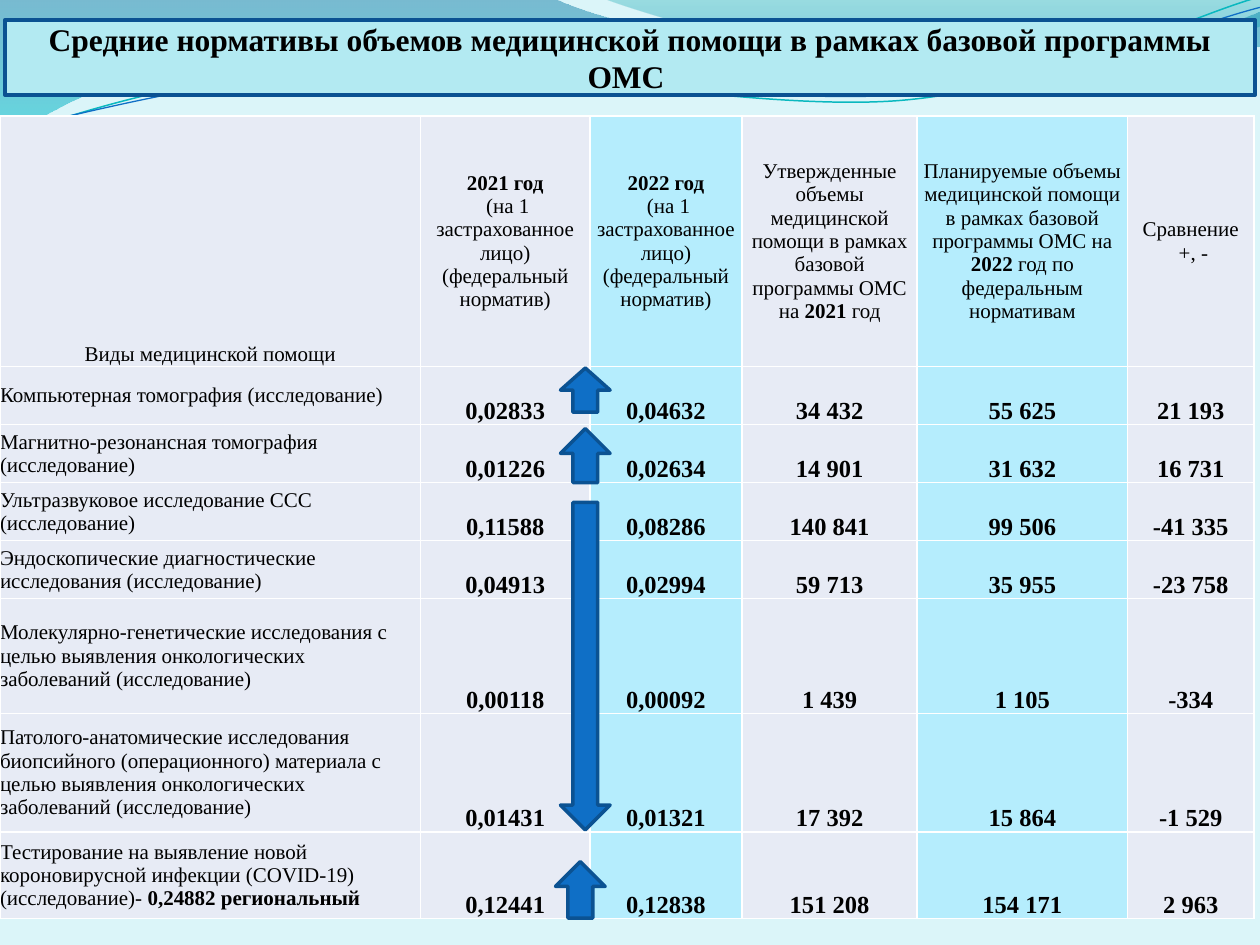
from typing import NamedTuple

from lxml.etree import SubElement
from pptx import Presentation
from pptx.dml.color import RGBColor
from pptx.enum.shapes import MSO_SHAPE as Kind
from pptx.enum.text import MSO_ANCHOR as Anchor, PP_ALIGN as Align
from pptx.oxml.ns import qn
from pptx.util import Cm, Pt

FONT = "Times New Roman"
BLACK = RGBColor(0, 0, 0)
PAGE = RGBColor(0xDB, 0xF5, 0xF9)
GREY = RGBColor(0xE7, 0xEB, 0xF5)
CYAN = RGBColor(0xB5, 0xED, 0xFD)
PANEL = RGBColor(0xB3, 0xEA, 0xF2)
BLUE = RGBColor(0x0F, 0x6F, 0xC6)
NAVY = RGBColor(0x0B, 0x52, 0x92)
TEAL = RGBColor(0x0A, 0xB8, 0xBF)


class Run(NamedTuple):
    text: str
    bold: bool = False


class Stop(NamedTuple):
    color: RGBColor
    pos: float
    alpha: int


class Wave(NamedTuple):
    """Points in cm; a step of one point is a line, of three a Bezier curve."""
    start: tuple
    steps: list
    stops: tuple = ()
    color: RGBColor = BLUE
    width: float = 0


class Arrow(NamedTuple):
    kind: Kind
    left: float
    top: float
    height: float


WAVES = [
    Wave((0, 0), [
        [(11.18, -0.03)],
        [(12.09, 0.43), (16.87, 1.6), (19.25, 1.6)],
        [(21.67, 1.6), (24.33, 0.66), (25.4, 0.23)],
        [(25.43, 0.91)],
        [(24.97, 1.12), (22.1, 1.93), (18.95, 1.91)],
        [(15.8, 1.91), (9.7, 0.71), (6.53, 0.86)],
        [(3.28, 0.91), (1.17, 2.11), (-0.03, 2.87)],
        [(0, 0)],
    ], (Stop(RGBColor(0x00, 0x74, 0xA1), 0, 45), Stop(RGBColor(0x00, 0xC6, 0xCF), 1, 55))),
    Wave((12.17, -0.03), [
        [(12.93, 0.28), (17.32, 1.57), (19.53, 1.65)],
        [(21.74, 1.75), (24.41, 0.81), (25.4, 0.53)],
        [(25.4, 0)],
        [(12.17, -0.03)],
    ], (Stop(RGBColor(0x00, 0xA1, 0xA9), 0, 30), Stop(RGBColor(0x00, 0x8B, 0xBF), 0.8, 45))),
    Wave((0, 2.82), [
        [(1.22, 2.36), (4.01, 1.45), (7.04, 1.32)],
        [(10.03, 1.19), (15.06, 2.26), (18.11, 2.03)],
        [(21.16, 1.78), (23.83, 0.38), (25.35, -0.05)],
    ], color=TEAL, width=0.85),
    Wave((0, 2.64), [
        [(1.19, 2.44), (4.17, 1.55), (7.19, 1.42)],
        [(10.24, 1.3), (15.16, 2.13), (18.21, 1.91)],
        [(21.23, 1.7), (23.9, 0.53), (25.4, 0.15)],
    ], color=BLUE, width=0.75),
]

TITLE = "Средние нормативы объемов медицинской помощи в рамках базовой программы ОМС "
NORM = [Run(" (на 1 застрахованное лицо) (федеральный норматив)")]
HEADS = [
    [[Run("Виды медицинской помощи")]],
    [[Run("2021 год", True)], NORM],
    [[Run("2022 год", True)], NORM],
    [[Run("Утвержденные объемы медицинской помощи в рамках базовой программы ОМС на "),
      Run("2021 ", True), Run("год")]],
    [[Run("Планируемые объемы медицинской помощи в рамках базовой программы ОМС на "),
      Run("2022 ", True), Run("год по федеральным нормативам")]],
    [[Run("Сравнение")], [Run(" +, -")]],
]
ROWS = [
    ([Run("Компьютерная томография (исследование)")],
     ["0,02833", "0,04632", "34 432", "55 625", "21 193"]),
    ([Run("Магнитно-резонансная томография (исследование)")],
     ["0,01226", "0,02634", "14 901", "31 632", "16 731"]),
    ([Run("Ультразвуковое исследование ССС (исследование)")],
     ["0,11588", "0,08286", "140 841", "99 506", "-41 335"]),
    ([Run("Эндоскопические диагностические исследования (исследование)")],
     ["0,04913", "0,02994", "59 713", "35 955", "-23 758"]),
    ([Run("Молекулярно-генетические исследования с целью выявления "
          "онкологических заболеваний (исследование)")],
     ["0,00118", "0,00092", "1 439", "1 105", "-334"]),
    ([Run("Патолого-анатомические исследования биопсийного (операционного) материала "
          "с целью выявления онкологических заболеваний (исследование)")],
     ["0,01431", "0,01321", "17 392", "15 864", "-1 529"]),
    ([Run("Тестирование на выявление новой короновирусной инфекции (COVID-19) (исследование)- "),
      Run("0,24882 региональный", True)],
     ["0,12441", "0,12838", "151 208", "154 171", "2 963"]),
]
WIDTHS = [8.48, 3.41, 3.07, 3.53, 4.24, 2.55]
HEIGHTS = [5.05] + [1.17] * 4 + [2.31, 2.39, 1.75]
ARROWS = [
    Arrow(Kind.UP_ARROW, 11.3, 7.42, 0.89),
    Arrow(Kind.UP_ARROW, 11.3, 8.64, 1.09),
    Arrow(Kind.DOWN_ARROW, 11.3, 10.13, 6.6),
    Arrow(Kind.UP_ARROW, 11.2, 17.37, 1.14),
]


def bend(shape, steps: list) -> None:
    """Join the line segments of each three-point step into one curve."""
    track = next(shape.element.iter(qn("a:path")))
    lines = iter(track.findall(qn("a:lnTo")))
    for step in steps:
        first = next(lines)
        if len(step) == 3:
            curve = track.makeelement(qn("a:cubicBezTo"))
            first.addprevious(curve)
            for line in (first, next(lines), next(lines)):
                curve.append(line[0])
                track.remove(line)


def draw_wave(shapes, wave: Wave) -> None:
    pen = shapes.build_freeform(*map(Cm, wave.start))
    pen.add_line_segments([(Cm(x), Cm(y)) for step in wave.steps for x, y in step],
                          close=bool(wave.stops))
    shape = pen.convert_to_shape()
    bend(shape, wave.steps)
    shape.shadow.inherit = False
    if not wave.stops:
        shape.fill.background()
        shape.line.color.rgb = wave.color
        shape.line.width = Pt(wave.width)
        return
    shape.line.fill.background()
    shape.fill.gradient()
    shape.fill.gradient_angle = 270
    for slot, stop in zip(shape.fill.gradient_stops, wave.stops):
        slot.color.rgb = stop.color
        slot.position = stop.pos
    for tone, stop in zip(shape.element.spPr.iter(qn("a:srgbClr")), wave.stops):
        SubElement(tone, qn("a:alpha"), val=str(stop.alpha * 1000))


def write(frame, paras: list, size: float, align: Align) -> None:
    for i, runs in enumerate(paras):
        para = frame.add_paragraph() if i else frame.paragraphs[0]
        para.alignment = align
        for item in runs:
            run = para.add_run()
            run.text = item.text
            run.font.name = FONT
            run.font.size = Pt(size)
            run.font.bold = item.bold
            run.font.color.rgb = BLACK


def fill_cell(cell, paras: list, col: int, anchor: Anchor, size: float = 12,
              align: Align = Align.CENTER) -> None:
    cell.margin_left = cell.margin_right = cell.margin_top = cell.margin_bottom = 0
    cell.vertical_anchor = anchor
    write(cell.text_frame, paras, size, align)
    props = cell._tc.get_or_add_tcPr()
    for side in ("lnL", "lnR", "lnT", "lnB"):
        edge = SubElement(props, qn("a:" + side), w=str(Pt(1)))
        SubElement(SubElement(edge, qn("a:solidFill")), qn("a:srgbClr"), val="FFFFFF")
    cell.fill.solid()
    cell.fill.fore_color.rgb = CYAN if col in (2, 4) else GREY


def draw_table(shapes) -> None:
    table = shapes.add_table(len(HEIGHTS), len(WIDTHS), Cm(0), Cm(2.34),
                             Cm(sum(WIDTHS)), Cm(sum(HEIGHTS))).table
    table.first_row = table.horz_banding = False
    for col, width in zip(table.columns, WIDTHS):
        col.width = Cm(width)
    for row, height in zip(table.rows, HEIGHTS):
        row.height = Cm(height)
    for c, paras in enumerate(HEADS):
        fill_cell(table.cell(0, c), paras, c, Anchor.MIDDLE if c else Anchor.BOTTOM)
    for r, (label, values) in enumerate(ROWS, 1):
        fill_cell(table.cell(r, 0), [label], 0, Anchor.MIDDLE, align=Align.LEFT)
        for c, value in enumerate(values, 1):
            fill_cell(table.cell(r, c), [[Run(value, True)]], c, Anchor.BOTTOM, 14)


def draw_box(shapes, kind: Kind, box: tuple, fill: RGBColor):
    shape = shapes.add_shape(kind, *map(Cm, box))
    shape.shadow.inherit = False
    shape.fill.solid()
    shape.fill.fore_color.rgb = fill
    shape.line.color.rgb = NAVY
    shape.line.width = Pt(2)
    return shape


def main() -> None:
    deck = Presentation()
    deck.slide_width, deck.slide_height = Cm(25.4), Cm(19.05)
    slide = deck.slides.add_slide(deck.slide_layouts[6])
    slide.background.fill.solid()
    slide.background.fill.fore_color.rgb = PAGE
    shapes = slide.shapes
    for wave in WAVES:
        draw_wave(shapes, wave)
    draw_table(shapes)
    title = draw_box(shapes, Kind.RECTANGLE, (0.1, 0.4, 25.2, 1.52), PANEL)
    title.text_frame.vertical_anchor = Anchor.MIDDLE
    write(title.text_frame, [[Run(TITLE, True)]], 18, Align.CENTER)
    for arrow in ARROWS:
        draw_box(shapes, arrow.kind, (arrow.left, arrow.top, 1, arrow.height), BLUE)
    deck.save("out.pptx")


if __name__ == "__main__":
    main()
